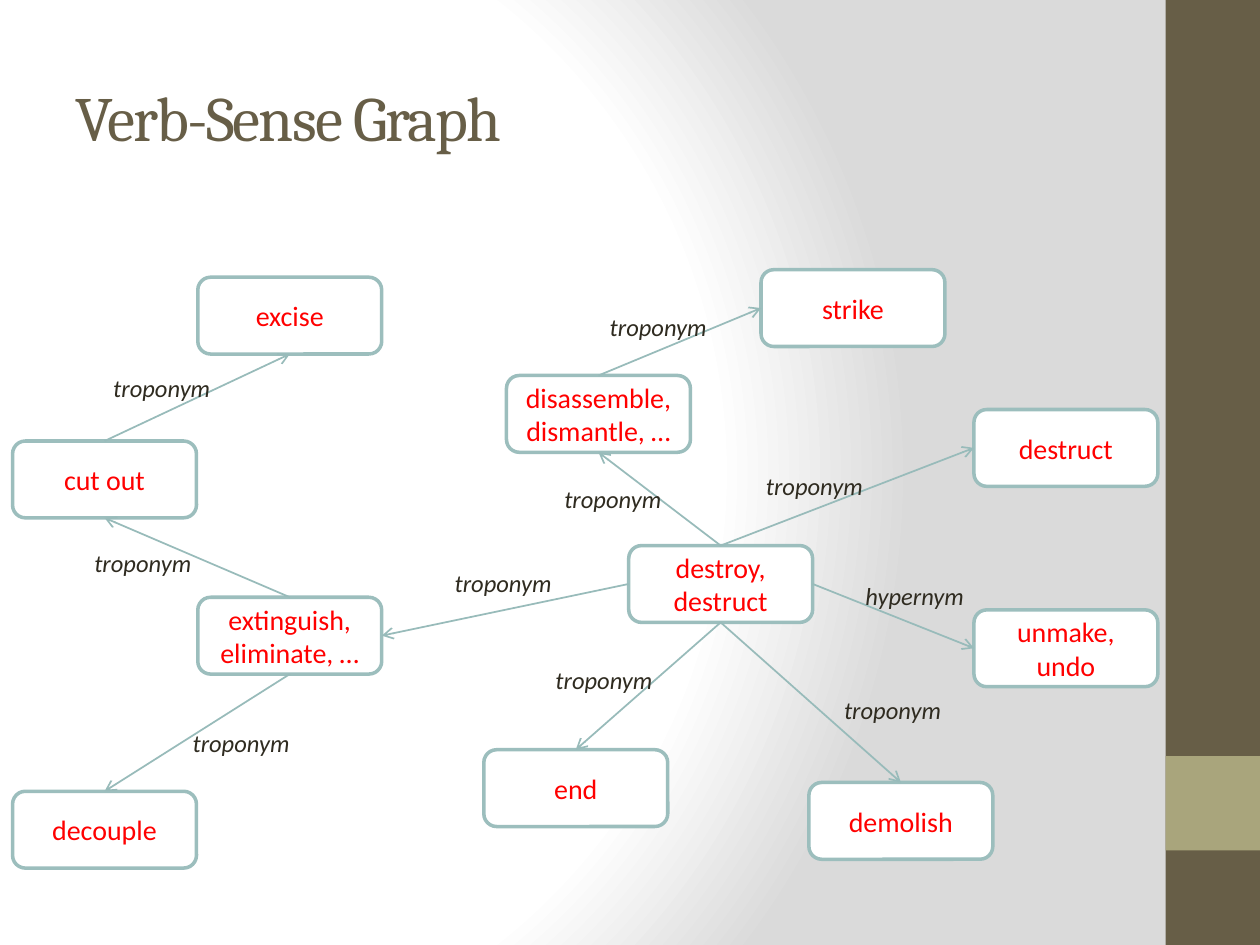
from dataclasses import dataclass

from pptx import Presentation, oxml
from pptx import util as u
from pptx.dml.color import RGBColor
from pptx.enum import shapes, text
from pptx.oxml import ns

TOP, LEFT, BOTTOM, RIGHT = range(4)  # glue points of a box


@dataclass(frozen=True)
class Theme:
    head: str = "Cambria"
    body: str = "Calibri"
    brown: str = "675E47"
    olive: str = "A9A57C"
    white: str = "FFFFFF"
    gray: str = "DADADA"
    edge: str = "9CBEBD"
    link: str = "98BBBA"
    red: str = "FF0000"
    ink: str = "2F2B20"
    big: int = 36
    mid: int = 16
    small: int = 14


class Deck:
    """Style and current slide; lengths are cells of a 100 by 75 grid."""

    def __init__(self, theme):
        self.theme = theme
        self.file = Presentation()
        self.file.slide_width = u.Inches(10)
        self.file.slide_height = u.Inches(7.5)
        self.cell = self.file.slide_width / 100
        self.slide = self.file.slides.add_slide(self.file.slide_layouts[5])

    def grid(self, *cells):
        return [round(c * self.cell) for c in cells]

    def add_run(self, frame, words, size, color, font, slant=False):
        run = frame.paragraphs[0].add_run()
        run.text = words
        run.font.size = u.Pt(size)
        run.font.name = font
        run.font.italic = slant
        run.font.color.rgb = RGBColor.from_string(color)
        return run

    def glow(self):
        t = self.theme
        self.slide.background.fill.gradient()
        old = next(self.slide.element.iter(ns.qn("a:gradFill")))
        stops = "".join(
            f'<a:gs pos="{pos * 1000}"><a:srgbClr val="{color}"/></a:gs>'
            for pos, color in ((0, t.white), (75, t.white), (100, t.gray)))
        new = oxml.parse_xml(
            f'<a:gradFill {ns.nsdecls("a")} rotWithShape="1"><a:gsLst>{stops}</a:gsLst>'
            '<a:path path="circle"><a:fillToRect l="20000" t="50000" r="100000" b="50000"/>'
            '</a:path></a:gradFill>')
        old.getparent().replace(old, new)

    def title(self, words, *place):
        t, shape = self.theme, self.slide.shapes.title
        shape.left, shape.top, shape.width, shape.height = self.grid(*place)
        frame = shape.text_frame
        frame.vertical_anchor = text.MSO_ANCHOR.MIDDLE
        frame.paragraphs[0].alignment = text.PP_ALIGN.LEFT
        run = self.add_run(frame, words, t.big, t.brown, t.head)
        run.font._element.set("spc", "-100")

    def shape(self, kind, place, fill):
        shape = self.slide.shapes.add_shape(kind, *self.grid(*place))
        shape.shadow.inherit = False
        shape.fill.solid()
        shape.fill.fore_color.rgb = RGBColor.from_string(fill)
        return shape

    def band(self, place, fill):
        self.shape(shapes.MSO_SHAPE.RECTANGLE, place, fill).line.fill.background()

    def node(self, words, col, row):
        t = self.theme
        box = self.shape(shapes.MSO_SHAPE.ROUNDED_RECTANGLE, (col, row, 14.6, 6.1), t.white)
        box.line.color.rgb = RGBColor.from_string(t.edge)
        box.line.width = u.Pt(2)
        frame = box.text_frame
        frame.word_wrap = True
        frame.vertical_anchor = text.MSO_ANCHOR.MIDDLE
        frame.paragraphs[0].alignment = text.PP_ALIGN.CENTER
        self.add_run(frame, words, t.mid, t.red, t.body)
        return box

    def arrow(self, start, out, end, into):
        line = self.slide.shapes.add_connector(shapes.MSO_CONNECTOR.STRAIGHT, 0, 0, 0, 0)
        line.begin_connect(start, out)
        line.end_connect(end, into)
        line.line.color.rgb = RGBColor.from_string(self.theme.link)
        line.line.width = u.Pt(1)
        pen = line.line._get_or_add_ln()
        pen.append(oxml.parse_xml(f'<a:tailEnd {ns.nsdecls("a")} type="arrow"/>'))
        pen.addnext(oxml.parse_xml(f'<a:effectLst {ns.nsdecls("a")}/>'))

    def label(self, words, col, row):
        t = self.theme
        frame = self.slide.shapes.add_textbox(*self.grid(col, row, 9.9, 3.4)).text_frame
        frame.word_wrap = False
        frame.auto_size = text.MSO_AUTO_SIZE.SHAPE_TO_FIT_TEXT
        self.add_run(frame, words, t.small, t.ink, t.body, slant=True)


# Verb senses: key, words, column, row
NODES = [
    ("take", "disassemble, dismantle, …", 40.2, 29.8),
    ("root", "destroy, destruct", 49.9, 43.3),
    ("quench", "extinguish, eliminate, …", 15.7, 47.4),
    ("cut", "cut out", 1, 35),
    ("split", "decouple", 1, 62.8),
    ("trim", "excise", 15.7, 22),
    ("strike", "strike", 60.4, 21.4),
    ("end", "end", 38.4, 59.5),
    ("raze", "demolish", 64.2, 62.1),
    ("undo", "unmake, undo", 77.3, 48.4),
    ("ruin", "destruct", 77.3, 32.5),
]

# Links: start, its side, end, its side, label, label column and row
LINKS = [
    ("root", LEFT, "quench", RIGHT, "troponym", 35.1, 44.6),
    ("root", BOTTOM, "end", TOP, "troponym", 43.1, 52.3),
    ("root", BOTTOM, "raze", TOP, "troponym", 66, 54.7),
    ("root", TOP, "take", BOTTOM, "troponym", 43.8, 37.9),
    ("root", TOP, "ruin", LEFT, "troponym", 59.8, 36.9),
    ("take", TOP, "strike", LEFT, "troponym", 47.4, 24.3),
    ("root", RIGHT, "undo", LEFT, "hypernym", 67.7, 45.6),
    ("quench", BOTTOM, "split", TOP, "troponym", 14.3, 57.3),
    ("quench", TOP, "cut", BOTTOM, "troponym", 6.5, 43),
    ("cut", TOP, "trim", BOTTOM, "troponym", 8, 29.1),
]


def main():
    theme = Theme()
    deck = Deck(theme)

    # Backdrop and title
    deck.glow()
    deck.band((92.5, 0, 7.5, 75), theme.brown)
    deck.band((92.5, 60, 7.5, 7.5), theme.olive)
    deck.title("Verb-Sense Graph", 5, 3, 83.3, 12.5)

    # Graph: boxes, then arrows, then labels on top
    nodes = {key: deck.node(*rest) for key, *rest in NODES}
    for start, out, end, into, *_ in LINKS:
        deck.arrow(nodes[start], out, nodes[end], into)
    for *_, words, col, row in LINKS:
        deck.label(words, col, row)

    deck.file.save("out.pptx")


if __name__ == "__main__":
    main()
